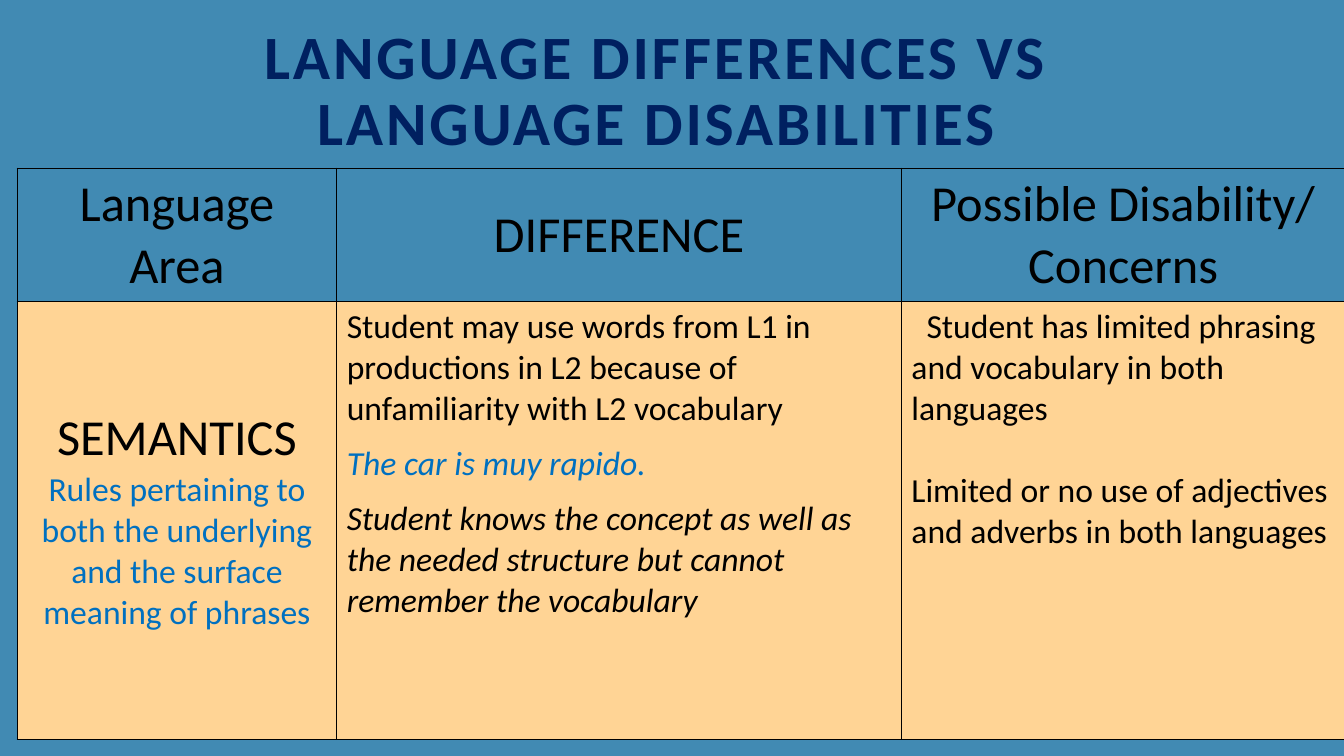
import pptx
import pptx.util
import pptx.dml.color
import pptx.enum.text
import lxml.etree

Inches, Pt = pptx.util.Inches, pptx.util.Pt
RGBColor = pptx.dml.color.RGBColor
ALIGN, ANCHOR = pptx.enum.text.PP_ALIGN, pptx.enum.text.MSO_ANCHOR
BLUE = RGBColor(0x41, 0x8A, 0xB3)
NAVY = RGBColor(0x00, 0x20, 0x60)
BLACK = RGBColor(0x00, 0x00, 0x00)
ACCENT = RGBColor(0x00, 0x70, 0xC0)
PEACH = RGBColor(0xFF, 0xD4, 0x95)
NS = "http://schemas.openxmlformats.org/drawingml/2006/main"

HEAD = {"size": Pt(36)}
BODY = {"size": Pt(24)}
NOTE = {"size": Pt(24), "color": ACCENT}
ITALIC = {"size": Pt(24), "italic": True}
EXAMPLE = {"size": Pt(24), "italic": True, "color": ACCENT}
COLUMNS = [3.17, 5.6, 4.4]
ROWS = [1.32, 4.34]
CELLS = [
    [[("Language Area", HEAD, 0)],
     [("DIFFERENCE", HEAD, 0)],
     [("Possible Disability/ Concerns", HEAD, 0)]],
    [[("SEMANTICS", HEAD, 0),
      ("Rules pertaining to both the underlying and the surface meaning of phrases", NOTE, 0)],
     [("Student may use words from L1 in productions in L2 because of unfamiliarity with L2 vocabulary", BODY, 9.76),
      ("The car is muy rapido.", EXAMPLE, 9.76),
      ("Student knows the concept as well as the needed structure but cannot remember the vocabulary", ITALIC, 0)],
     [("Student has limited phrasing and vocabulary in both languages", BODY, 29.3),
      ("Limited or no use of adjectives and adverbs in both languages", BODY, 0)]],
]


def format_font(font, values):
    for name, value in {"name": "Calibri", "color": BLACK, **values}.items():
        if name == "color":
            font.color.rgb = value
        else:
            setattr(font, name, value)


def add_borders(cell):
    tcPr = cell._tc.get_or_add_tcPr()
    for side in ("lnL", "lnR", "lnT", "lnB"):
        ln = lxml.etree.SubElement(tcPr, f"{{{NS}}}{side}", w=str(Pt(1)))
        fill = lxml.etree.SubElement(ln, f"{{{NS}}}solidFill")
        lxml.etree.SubElement(fill, f"{{{NS}}}srgbClr", val=str(BLACK))


prs = pptx.Presentation()
prs.slide_width, prs.slide_height = Inches(13.33), Inches(7.5)
s = prs.slides.add_slide(prs.slide_layouts[5])
s.background.fill.solid()
s.background.fill.fore_color.rgb = BLUE

title = s.shapes.title
title.left, title.top, title.width, title.height = map(Inches, (0.29, 0.25, 12.44, 1.34))
tf = title.text_frame
tf.text = "LANGUAGE DIFFERENCES VS\vLANGUAGE DISABILITIES"
tf.word_wrap = True
tf.auto_size = pptx.enum.text.MSO_AUTO_SIZE.NONE
tf.vertical_anchor = ANCHOR.MIDDLE
p = tf.paragraphs[0]
p.alignment, p.line_spacing = ALIGN.CENTER, 0.9
for r in p.runs:
    format_font(r.font, {"size": Pt(44), "bold": True, "color": NAVY})
    r.font._element.set("spc", "200")

frame = s.shapes.add_table(len(ROWS), len(COLUMNS), Inches(0.17), Inches(1.67),
                           Inches(sum(COLUMNS)), Inches(sum(ROWS)))
table = frame.table
table.first_row = table.horz_banding = False
for column, width in zip(table.columns, COLUMNS):
    column.width = Inches(width)
for row, height in zip(table.rows, ROWS):
    row.height = Inches(height)

for i, row in enumerate(CELLS):
    for j, paragraphs in enumerate(row):
        cell = table.cell(i, j)
        centred = i == 0 or j == 0
        cell.vertical_anchor = ANCHOR.MIDDLE if centred else ANCHOR.TOP
        add_borders(cell)
        if i == 0:
            cell.fill.background()
        else:
            cell.fill.solid()
            cell.fill.fore_color.rgb = PEACH
        tf = cell.text_frame
        for k, (text, values, gap) in enumerate(paragraphs):
            p = tf.paragraphs[0] if k == 0 else tf.add_paragraph()
            p.alignment = ALIGN.CENTER if centred else ALIGN.LEFT
            p.space_after = Pt(gap)
            r = p.add_run()
            r.text = text
            format_font(r.font, values)

first = table.cell(1, 2).text_frame.paragraphs[0]
first._p.get_or_add_pPr().set("indent", str(Inches(0.15)))

prs.save("out.pptx")
